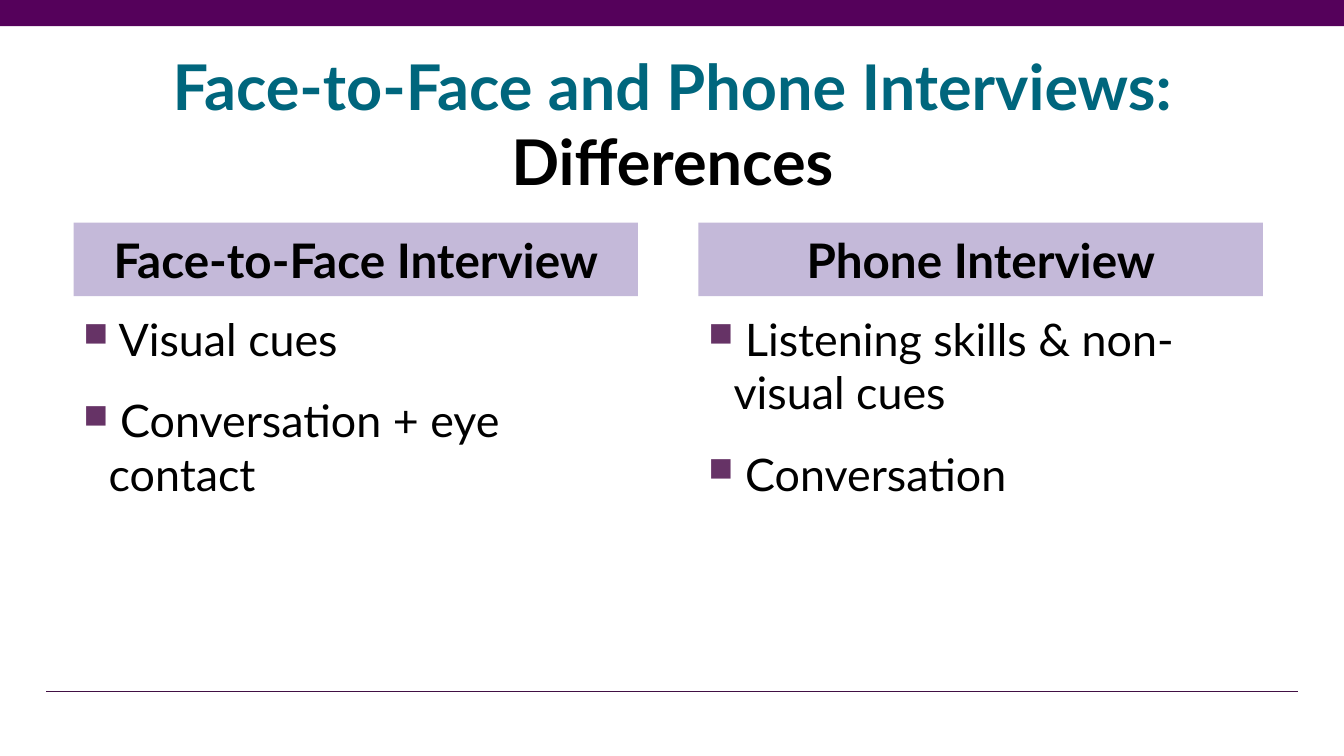
"""Build a slide that contrasts face-to-face and phone interviews."""
from lxml.etree import SubElement
from pptx import Presentation
from pptx.dml.color import RGBColor
from pptx.enum.shapes import MSO_CONNECTOR as Connector, MSO_SHAPE as Shape
from pptx.enum.text import MSO_ANCHOR as Anchor, PP_ALIGN as Align
from pptx.oxml.ns import qn
from pptx.util import Pt

BLACK = RGBColor(0x00, 0x00, 0x00)
TEAL = RGBColor(0x00, 0x66, 0x7D)
LILAC = RGBColor(0xC4, 0xB9, 0xD9)
PURPLE = RGBColor(0x55, 0x01, 0x5B)
DARK_PURPLE = RGBColor(0x41, 0x10, 0x44)
BULLET_PURPLE = RGBColor(0x66, 0x33, 0x66)

COLUMN_LEFT, COLUMN_STEP, COLUMN_WIDTH = 52.56, 446.4, 403.2
COLUMNS = [
    ("Face-to-Face Interview", [" Visual cues", " Conversation + eye contact"]),
    ("Phone Interview", [" Listening skills & non-visual cues", " Conversation"]),
]


def write(para, text, *, size, color=BLACK, bold=False, align=Align.LEFT):
    """Put formatted text in a paragraph."""
    para.alignment = align
    span = para.add_run()
    span.text = text
    span.font.name = "Lato"
    span.font.size = Pt(size)
    span.font.bold = bold
    span.font.color.rgb = color


def add_bar(page, left, top, width, height, color):
    """Add a plain filled rectangle."""
    bar = page.shapes.add_shape(
        Shape.RECTANGLE, Pt(left), Pt(top), Pt(width), Pt(height))
    bar.shadow.inherit = False
    bar.fill.solid()
    bar.fill.fore_color.rgb = color
    bar.line.fill.background()
    return bar


def add_rule(page, left, right, top):
    """Add a thin horizontal line."""
    rule = page.shapes.add_connector(
        Connector.STRAIGHT, Pt(left), Pt(top), Pt(right), Pt(top))
    rule.line.color.rgb = DARK_PURPLE
    rule.line.width = Pt(1.25)
    SubElement(rule.element.spPr, qn("a:effectLst"))


def add_paragraphs(page, left, top, width, height, count):
    """Add a wrapping text box and return its empty paragraphs."""
    box = page.shapes.add_textbox(Pt(left), Pt(top), Pt(width), Pt(height))
    frame = box.text_frame
    frame.word_wrap = True
    return [frame.paragraphs[0]] + [frame.add_paragraph() for _ in range(count - 1)]


def add_bullet(para):
    """Give a paragraph a hanging square bullet."""
    props = para._p.get_or_add_pPr()
    props.set("marL", str(Pt(18)))
    props.set("indent", str(-Pt(18)))
    color = SubElement(props, qn("a:buClr"))
    SubElement(color, qn("a:srgbClr"), val=str(BULLET_PURPLE))
    SubElement(props, qn("a:buSzPct"), val="75000")
    SubElement(props, qn("a:buChar"), char="■")


def add_title(page):
    """Add the two-line title."""
    lines = [("Face-to-Face and Phone Interviews:", TEAL), ("Differences", BLACK)]
    paras = add_paragraphs(page, 18, 30.24, 924.5, 114.5, len(lines))
    for para, (text, color) in zip(paras, lines):
        write(para, text, size=45, color=color, bold=True, align=Align.CENTER)


def add_column(page, left, heading, points):
    """Add a heading bar with its bullet list below."""
    bar = add_bar(page, left, 159.12, COLUMN_WIDTH, 52.56, LILAC)
    bar.text_frame.vertical_anchor = Anchor.MIDDLE
    bar.text_frame.word_wrap = True
    write(bar.text_frame.paragraphs[0], heading, size=34, bold=True,
          align=Align.CENTER)
    paras = add_paragraphs(page, left, 218.88, COLUMN_WIDTH, 175, len(points))
    for index, (para, text) in enumerate(zip(paras, points)):
        add_bullet(para)
        para.space_before = Pt(20 if index else 0)
        write(para, text, size=32)


def main():
    """Build and save the deck."""
    deck = Presentation()
    deck.slide_width, deck.slide_height = Pt(960), Pt(540)
    page = deck.slides.add_slide(deck.slide_layouts[6])
    add_rule(page, 33.12, 927.36, 493.92)
    add_bar(page, 0, 0, 960, 18.72, PURPLE)
    add_title(page)
    for index, (heading, points) in enumerate(COLUMNS):
        add_column(page, COLUMN_LEFT + index * COLUMN_STEP, heading, points)
    deck.save("out.pptx")


if __name__ == "__main__":
    main()
